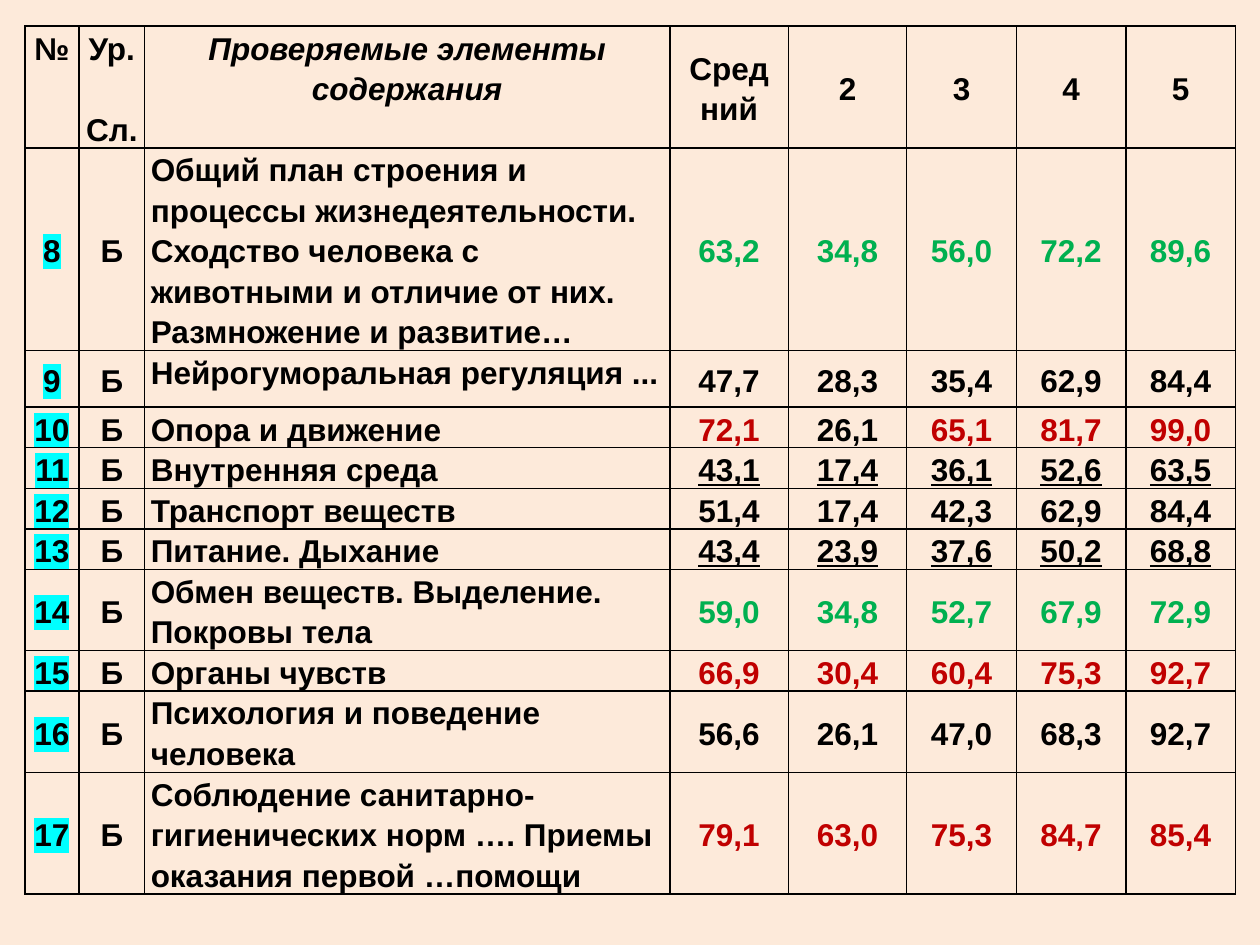
from dataclasses import dataclass
from typing import Optional

import lxml.etree
import pptx
import pptx.dml.color
import pptx.enum.text
import pptx.oxml.ns
import pptx.util

Pt = pptx.util.Pt
RGBColor = pptx.dml.color.RGBColor
Align = pptx.enum.text.PP_ALIGN
Anchor = pptx.enum.text.MSO_ANCHOR
qn = pptx.oxml.ns.qn

PEACH = RGBColor(0xFD, 0xEA, 0xDA)
BLACK = RGBColor(0, 0, 0)
GREEN = RGBColor(0, 0xB0, 0x50)
RED = RGBColor(0xC0, 0, 0)
CYAN = RGBColor(0, 0xFF, 0xFF)

LINE_HEIGHT = 23.1
COLUMN_WIDTHS = [31, 37.4, 300.2, 67.7, 67.7, 62.6, 62.6, 62.6]
CELL_FORMAT = dict(margin_left=Pt(3.6), margin_right=Pt(3.6), margin_top=0, margin_bottom=0)
FONT_FORMAT = dict(name="Arial", size=Pt(18), bold=True)


@dataclass
class CellText:
    paragraphs: list[str]
    color: RGBColor = BLACK
    highlight: Optional[RGBColor] = None
    italic: bool = False
    underline: bool = False
    align: Optional[Align] = Align.CENTER
    anchor: Anchor = Anchor.MIDDLE
    gap: float = 0


@dataclass
class Topic:
    number: int
    title: str
    scores: str
    color: RGBColor = BLACK
    underline: bool = False
    height: float = LINE_HEIGHT
    black_score: Optional[int] = None

    def cells(self) -> list[CellText]:
        scores = [
            CellText([score], BLACK if index == self.black_score else self.color,
                     underline=self.underline)
            for index, score in enumerate(self.scores.split())
        ]
        return [
            CellText([str(self.number)], highlight=CYAN),
            CellText(["Б"]),
            CellText([self.title], align=None, anchor=Anchor.TOP),
            *scores,
        ]


HEADER = [
    CellText(["№"], anchor=Anchor.TOP),
    CellText(["Ур.", "Сл."], anchor=Anchor.TOP, gap=LINE_HEIGHT),
    CellText(["Проверяемые элементы содержания"], italic=True, anchor=Anchor.TOP),
    CellText(["Сред", "ний"]),
    *(CellText([grade]) for grade in "2345"),
]

TOPICS = [
    Topic(8, "Общий план строения и процессы жизнедеятельности. Сходство человека с "
          "животными и отличие от них. Размножение и развитие…",
          "63,2 34,8 56,0 72,2 89,6", GREEN, height=5 * LINE_HEIGHT),
    Topic(9, "Нейрогуморальная регуляция ...", "47,7 28,3 35,4 62,9 84,4", height=32.4),
    Topic(10, "Опора и движение", "72,1 26,1 65,1 81,7 99,0", RED, black_score=1),
    Topic(11, "Внутренняя среда", "43,1 17,4 36,1 52,6 63,5", underline=True),
    Topic(12, "Транспорт веществ", "51,4 17,4 42,3 62,9 84,4"),
    Topic(13, "Питание. Дыхание", "43,4 23,9 37,6 50,2 68,8", underline=True),
    Topic(14, "Обмен веществ. Выделение. Покровы тела", "59,0 34,8 52,7 67,9 72,9",
          GREEN, height=2 * LINE_HEIGHT),
    Topic(15, "Органы чувств", "66,9 30,4 60,4 75,3 92,7", RED),
    Topic(16, "Психология и поведение человека", "56,6 26,1 47,0 68,3 92,7",
          height=2 * LINE_HEIGHT),
    Topic(17, "Соблюдение санитарно-гигиенических норм …. Приемы оказания первой …помощи",
          "79,1 63,0 75,3 84,7 85,4", RED, height=3 * LINE_HEIGHT),
]


def apply(target: object, values: dict) -> None:
    for name, value in values.items():
        setattr(target, name, value)


def add_solid_color(parent, color: RGBColor) -> None:
    lxml.etree.SubElement(parent, qn("a:srgbClr"), val=str(color))


def add_borders(cell) -> None:
    properties = cell._tc.get_or_add_tcPr()
    for side in ("a:lnL", "a:lnR", "a:lnT", "a:lnB"):
        line = lxml.etree.SubElement(properties, qn(side), w=str(Pt(1)))
        add_solid_color(lxml.etree.SubElement(line, qn("a:solidFill")), BLACK)


def highlight_span(span, color: RGBColor) -> None:
    """Put the highlight right after the text fill, as the schema orders it."""
    fill = span._r.get_or_add_rPr().find(qn("a:solidFill"))
    highlight = lxml.etree.Element(qn("a:highlight"))
    add_solid_color(highlight, color)
    fill.addnext(highlight)


def fill_cell(cell, text: CellText) -> None:
    apply(cell, CELL_FORMAT | dict(vertical_anchor=text.anchor))
    add_borders(cell)
    cell.fill.background()
    frame = cell.text_frame
    for index, words in enumerate(text.paragraphs):
        para = frame.add_paragraph() if index else frame.paragraphs[0]
        apply(para, dict(alignment=text.align, line_spacing=1.15))
        if index and text.gap:
            para.space_before = Pt(text.gap)
        span = para.add_run()
        span.text = words
        apply(span.font, FONT_FORMAT | dict(italic=text.italic, underline=text.underline))
        span.font.color.rgb = text.color
        if text.highlight is not None:
            highlight_span(span, text.highlight)


def add_results_table(page) -> None:
    rows = [HEADER] + [topic.cells() for topic in TOPICS]
    heights = [3 * LINE_HEIGHT] + [topic.height for topic in TOPICS]
    table = page.shapes.add_table(
        len(rows), len(COLUMN_WIDTHS), Pt(14.2), Pt(15),
        Pt(sum(COLUMN_WIDTHS)), Pt(sum(heights)),
    ).table
    apply(table, dict(first_row=False, horz_banding=False))
    for column, width in zip(table.columns, COLUMN_WIDTHS):
        column.width = Pt(width)
    for row, height, texts in zip(table.rows, heights, rows):
        row.height = Pt(height)
        for cell, text in zip(row.cells, texts):
            fill_cell(cell, text)


def main() -> None:
    deck = pptx.Presentation()
    apply(deck, dict(slide_width=Pt(720), slide_height=Pt(540)))
    page = deck.slides.add_slide(deck.slide_layouts[6])
    page.background.fill.solid()
    page.background.fill.fore_color.rgb = PEACH
    add_results_table(page)
    deck.save("out.pptx")


if __name__ == "__main__":
    main()
